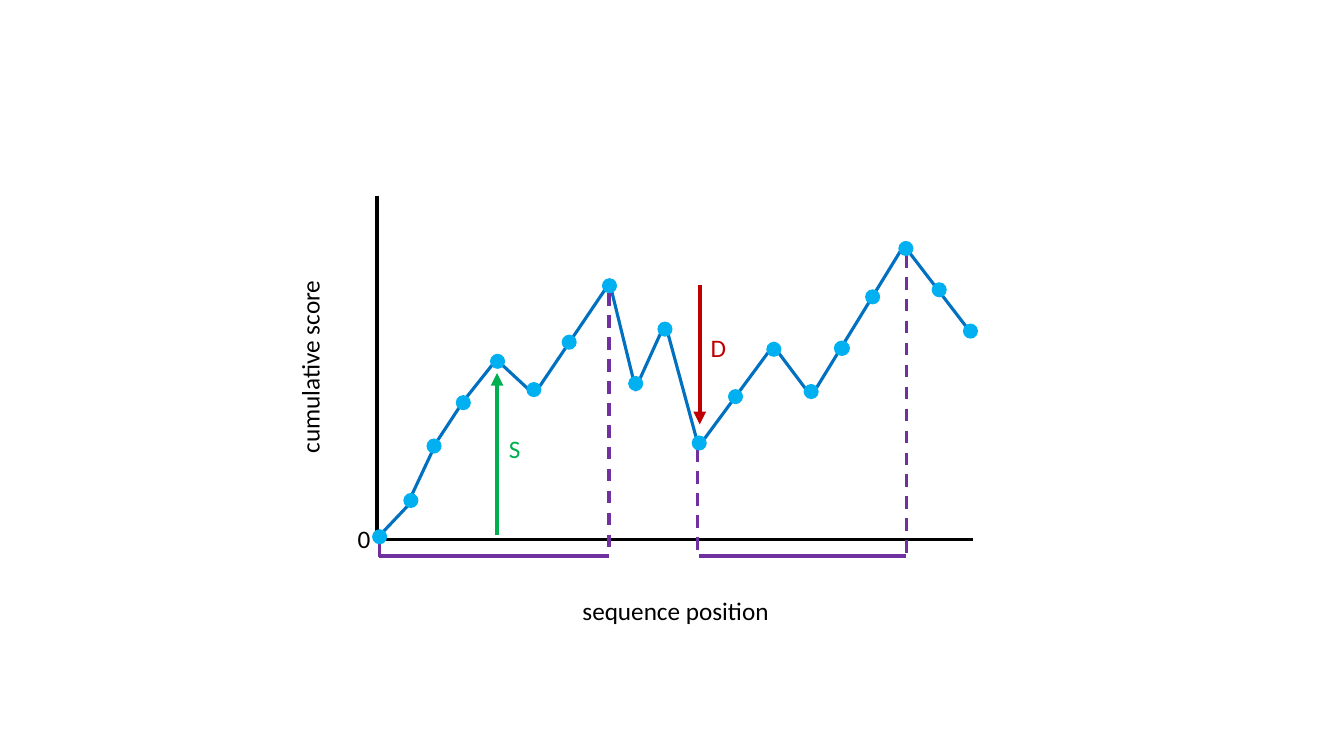
from pptx import Presentation
from pptx.dml.color import RGBColor
from pptx.enum.dml import MSO_LINE
from pptx.enum.shapes import MSO_CONNECTOR, MSO_SHAPE
from pptx.enum.text import MSO_AUTO_SIZE, PP_ALIGN
from pptx.oxml.ns import qn
from pptx.util import Inches, Pt
from lxml import etree

STRAIGHT, OVAL = MSO_CONNECTOR.STRAIGHT, MSO_SHAPE.OVAL
DASH, FIT = MSO_LINE.DASH, MSO_AUTO_SIZE.SHAPE_TO_FIT_TEXT
LEFT, CENTER = PP_ALIGN.LEFT, PP_ALIGN.CENTER

THEME = {
    "font": "Calibri", "size": 18, "thin": 2.25, "thick": 3,
    "ink": "000000", "curve": "0070C0", "dot": "00B0F0",
    "segment": "7030A0", "rise": "00B050", "drop": "C00000",
}

# Content: lengths in inches
DOT = 0.15
DOTS = [  # left, top
    (3.69, 5.25), (4, 4.89), (4.23, 4.35), (4.52, 3.92), (4.86, 3.51),
    (5.22, 3.79), (5.57, 3.32), (5.97, 2.76), (6.23, 3.73), (6.52, 3.19),
    (6.86, 4.32), (7.22, 3.86), (7.6, 3.39), (7.97, 3.81), (8.27, 3.38),
    (8.28, 3.38), (8.58, 2.87), (8.91, 2.39), (9.24, 2.8), (9.55, 3.21),
]
CURVE = [  # x1, y1, x2, y2
    (4.09, 4.97, 3.74, 5.34), (4.3, 4.45, 4.08, 4.92),
    (4.57, 4.02, 4.32, 4.4), (4.89, 3.61, 4.62, 3.95),
    (4.97, 3.61, 5.25, 3.87), (6.03, 2.83, 5.3, 3.91),
    (6.05, 2.82, 6.31, 3.88), (6.6, 3.2, 6.31, 3.84),
    (6.62, 3.29, 6.91, 4.36), (7.69, 3.4, 6.93, 4.43),
    (7.67, 3.43, 8.03, 3.91), (8.95, 2.46, 8.06, 3.91),
    (9, 2.48, 9.59, 3.25),
]
AXES = [(3.74, 5.35, 9.65, 5.35), (3.74, 1.94, 3.74, 5.36)]
BRACKET_Y = 5.52
BRACKETS = [(3.76, 6.04), (6.93, 8.99)]  # x1, x2
DASHES = [  # x, y1, y2
    (3.76, 5.4, 5.53), (6.04, 2.91, 5.5), (6.92, 4.46, 5.53), (8.99, 2.53, 5.53),
]
ARROWS = [((6.94, 2.83, 6.94, 4.21), "drop"), ((4.93, 5.31, 4.93, 3.7), "rise")]
LABELS = [  # text, left, top, width, colour, alignment, rotation
    ("S", 4.95, 4.25, 0.33, "rise", LEFT, 0),
    ("D", 6.95, 3.25, 0.33, "drop", LEFT, 0),
    ("0", 3.45, 5.14, 0.33, "ink", LEFT, 0),
    ("sequence position", 3.74, 5.86, 5.92, "ink", CENTER, 0),
    ("cumulative score", 1.37, 3.44, 3.4, "ink", CENTER, 270),
]
LABEL_HEIGHT = 0.4


def color(name):
    return RGBColor.from_string(THEME[name])


def add_line(s, ends, name, weight="thin", dash=None, arrow=False):
    sp = s.shapes.add_connector(STRAIGHT, *map(Inches, ends))
    sp.line.color.rgb = color(name)
    sp.line.width = Pt(THEME[weight])
    if dash:
        sp.line.dash_style = dash
    if arrow:
        etree.SubElement(sp.line._get_or_add_ln(), qn("a:tailEnd"), type="triangle")
    etree.SubElement(sp._element.spPr, qn("a:effectLst"))


def add_dot(s, left, top):
    sp = s.shapes.add_shape(OVAL, *map(Inches, (left, top, DOT, DOT)))
    sp.shadow.inherit = False
    sp.fill.solid()
    sp.fill.fore_color.rgb = color("dot")
    sp.line.fill.background()


def add_label(s, text, left, top, width, name, align, rotation):
    sp = s.shapes.add_textbox(*map(Inches, (left, top, width, LABEL_HEIGHT)))
    sp.rotation = rotation
    tf = sp.text_frame
    tf.word_wrap = True
    tf.auto_size = FIT
    p = tf.paragraphs[0]
    p.alignment = align
    r = p.add_run()
    r.text = text
    for key, value in {"name": THEME["font"], "size": Pt(THEME["size"])}.items():
        setattr(r.font, key, value)
    r.font.color.rgb = color(name)


def main():
    prs = Presentation()
    prs.slide_width, prs.slide_height = Inches(13.33), Inches(7.5)
    s = prs.slides.add_slide(prs.slide_layouts[6])

    # Score curve and axes
    for ends in CURVE:
        add_line(s, ends, "curve")
    for ends in AXES:
        add_line(s, ends, "ink")

    # Segments marked below the axis
    for x1, x2 in BRACKETS:
        add_line(s, (x1, BRACKET_Y, x2, BRACKET_Y), "segment", "thick")
    for x, y1, y2 in DASHES:
        add_line(s, (x, y1, x, y2), "segment", dash=DASH)

    # Data points, then the S and D arrows
    for left, top in DOTS:
        add_dot(s, left, top)
    for ends, name in ARROWS:
        add_line(s, ends, name, "thick", arrow=True)

    # Labels
    for label in LABELS:
        add_label(s, *label)

    prs.save("out.pptx")


if __name__ == "__main__":
    main()
